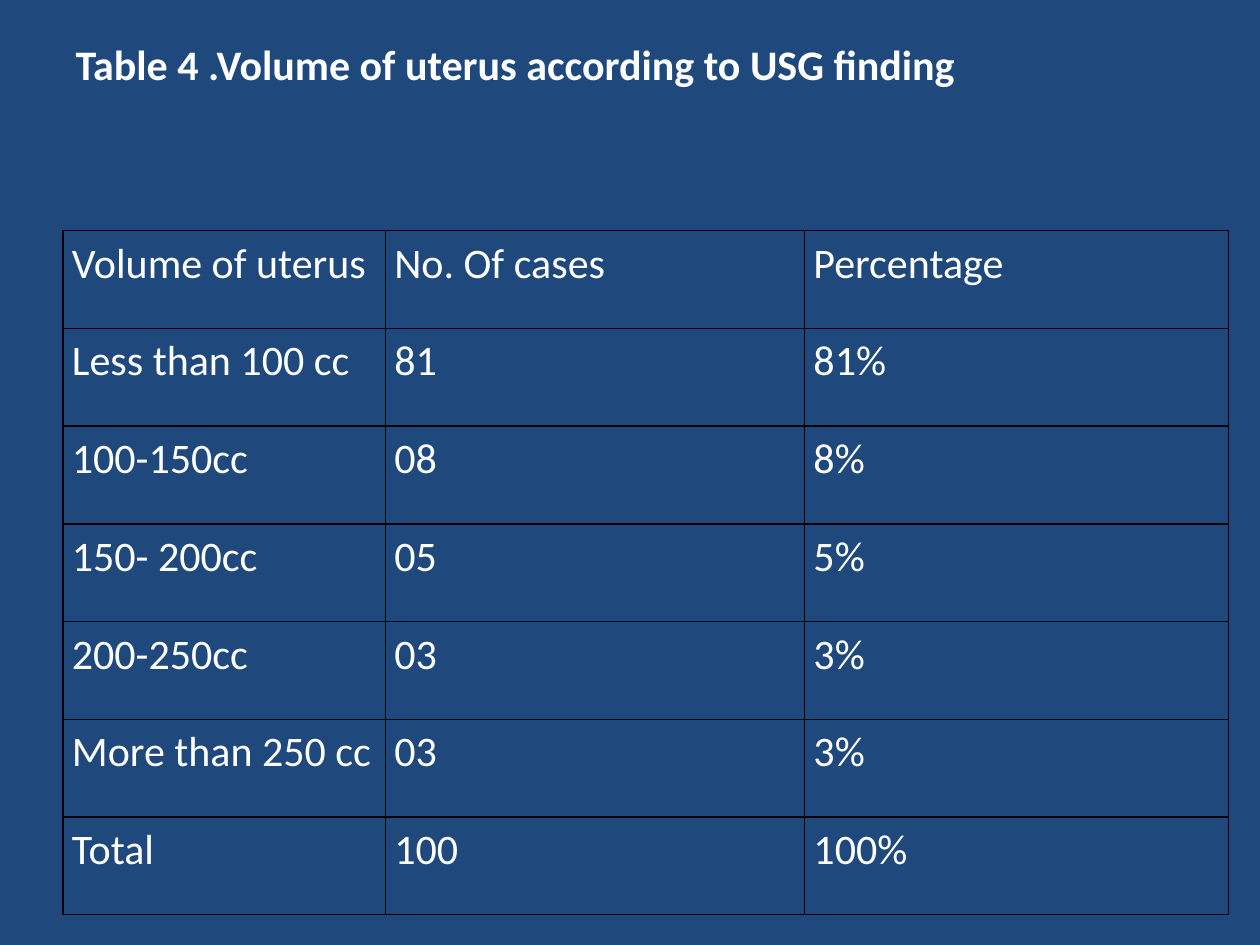
from dataclasses import dataclass

from lxml.etree import SubElement
from pptx import Presentation
from pptx.dml.color import RGBColor
from pptx.enum.text import MSO_ANCHOR as Anchor, MSO_AUTO_SIZE as AutoSize, PP_ALIGN as Align
from pptx.oxml.ns import qn
from pptx.util import Cm, Pt


@dataclass(frozen=True)
class Theme:
    background: str = "1F497D"
    text: str = "FFFFFF"
    border: str = "000000"
    font: str = "Calibri"
    text_size: int = 24
    border_width: int = 1


THEME = Theme()
TITLE = "Table 4 .Volume of uterus according to USG finding"
COLUMN_WIDTHS = (6.5, 8.45, 8.55)
ROW_HEIGHT = 1.97
FINDINGS = (
    ("Volume of uterus", "No. Of cases", "Percentage"),
    ("Less than 100 cc", "81", "81%"),
    ("100-150cc", "08", "8%"),
    ("150- 200cc", "05", "5%"),
    ("200-250cc", "03", "3%"),
    ("More than 250 cc", "03", "3%"),
    ("Total", "100", "100%"),
)


def write_text(frame, text, bold=False, line_spacing=1.0):
    paragraph = frame.paragraphs[0]
    paragraph.alignment = Align.LEFT
    paragraph.line_spacing = line_spacing
    run = paragraph.add_run()
    run.text = text
    run.font.name = THEME.font
    run.font.size = Pt(THEME.text_size)
    run.font.bold = bold
    run.font.color.rgb = RGBColor.from_string(THEME.text)


def add_title(slide, text):
    title = slide.shapes.title
    title.left, title.top = Cm(1.27), Cm(0.64)
    title.width, title.height = Cm(23.06), Cm(1.27)
    frame = title.text_frame
    frame.word_wrap = True
    frame.auto_size = AutoSize.NONE
    frame.vertical_anchor = Anchor.TOP
    write_text(frame, text, bold=True)


def draw_borders(cell):
    properties = cell._tc.get_or_add_tcPr()
    for side in ("a:lnL", "a:lnR", "a:lnT", "a:lnB"):
        line = SubElement(properties, qn(side), w=str(Pt(THEME.border_width)))
        fill = SubElement(line, qn("a:solidFill"))
        SubElement(fill, qn("a:srgbClr"), val=THEME.border)


def format_cell(cell, text):
    draw_borders(cell)
    cell.fill.background()
    cell.margin_left = cell.margin_right = Cm(0.18)
    cell.margin_top = cell.margin_bottom = 0
    cell.vertical_anchor = Anchor.TOP
    write_text(cell.text_frame, text, line_spacing=1.15)


def add_findings_table(slide, findings):
    table = slide.shapes.add_table(
        len(findings), len(COLUMN_WIDTHS), Cm(1.27), Cm(4.65),
        Cm(sum(COLUMN_WIDTHS)), Cm(ROW_HEIGHT * len(findings)),
    ).table
    table.first_row = table.horz_banding = False
    for column, width in zip(table.columns, COLUMN_WIDTHS):
        column.width = Cm(width)
    for row, texts in zip(table.rows, findings):
        row.height = Cm(ROW_HEIGHT)
        for cell, text in zip(row.cells, texts):
            format_cell(cell, text)


def main():
    presentation = Presentation()
    presentation.slide_width, presentation.slide_height = Cm(25.4), Cm(19.05)
    title_only = presentation.slide_layouts[5]
    slide = presentation.slides.add_slide(title_only)
    background = slide.background.fill
    background.solid()
    background.fore_color.rgb = RGBColor.from_string(THEME.background)
    add_title(slide, TITLE)
    add_findings_table(slide, FINDINGS)
    presentation.save("out.pptx")


if __name__ == "__main__":
    main()
